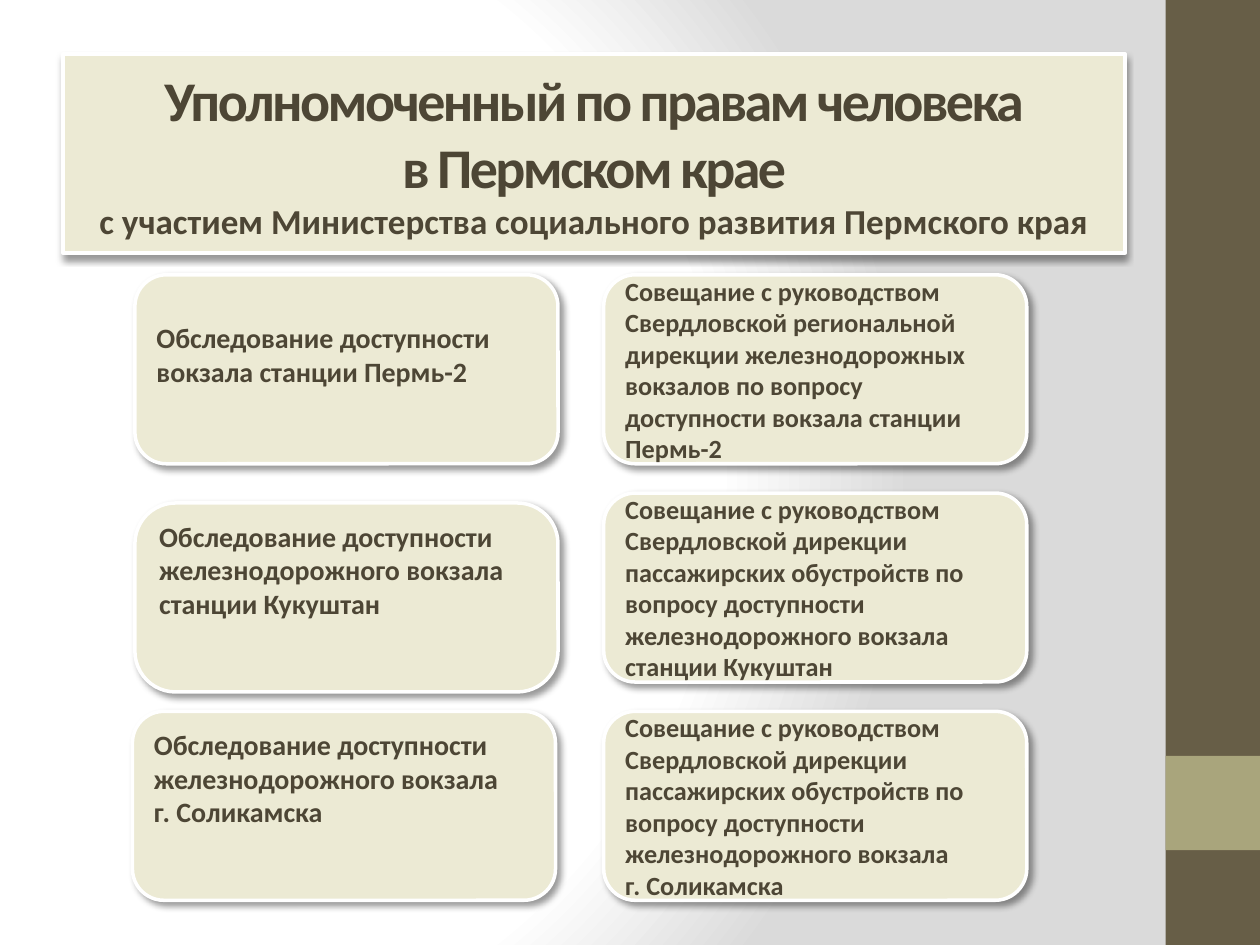
from dataclasses import dataclass

import lxml.etree
import pptx
import pptx.dml.color
import pptx.enum.shapes
import pptx.enum.text
import pptx.oxml
import pptx.oxml.ns
import pptx.util

Cm, Pt = pptx.util.Cm, pptx.util.Pt
SHAPE = pptx.enum.shapes.MSO_SHAPE
ALIGN = pptx.enum.text.PP_ALIGN
ANCHOR = pptx.enum.text.MSO_ANCHOR
NS = pptx.oxml.ns.nsdecls("a", "p")

SLIDE_W, SLIDE_H = 25.4, 19.05
BAR_X, BAR_W = 23.5, 1.9
CARD_W, CARD_H = 8.53, 3.81
LEFT_X, RIGHT_X = 2.72, 12.17
ROW_TOP, ROW_STEP = 5.54, 4.4
INK, CREAM, WHITE = "4D4635", "ECEAD4", "FFFFFF"


@dataclass
class Line:
    text: str
    size: float
    spacing: float = 0


@dataclass
class Card:
    x: float
    y: float
    size: float
    lines: list[str]
    bottom_inset: float = 3.6
    corner: float | None = None


def row_y(row: int) -> float:
    return ROW_TOP + row * ROW_STEP


CARDS = [
    Card(LEFT_X, row_y(0), 16,
         ["Обследование доступности вокзала станции Пермь-2"], 20.6),
    Card(LEFT_X, row_y(1) + 0.2, 16,
         ["Обследование доступности железнодорожного вокзала станции Кукуштан"],
         35.3, 0.215),
    Card(LEFT_X - 0.05, row_y(2), 16,
         ["Обследование доступности железнодорожного вокзала", "г. Соликамска"], 35.3),
    Card(RIGHT_X, row_y(0), 15,
         ["Совещание с руководством Свердловской региональной дирекции "
          "железнодорожных вокзалов по вопросу доступности вокзала станции Пермь-2"]),
    Card(RIGHT_X, row_y(1), 15,
         ["Совещание с руководством Свердловской дирекции пассажирских обустройств "
          "по вопросу доступности железнодорожного вокзала станции Кукуштан"]),
    Card(RIGHT_X, row_y(2), 15,
         ["Совещание с руководством Свердловской дирекции пассажирских обустройств "
          "по вопросу доступности железнодорожного вокзала", "г. Соликамска"]),
]

TITLE = [
    Line("Уполномоченный по правам человека", 32, -1.5),
    Line("в Пермском крае", 32, -1.5),
    Line("с участием Министерства социального развития Пермского края", 20),
]


def rgb(color: str) -> pptx.dml.color.RGBColor:
    return pptx.dml.color.RGBColor.from_string(color)


def set_attrs(obj, values: dict) -> None:
    for name, value in values.items():
        setattr(obj, name, value)


def set_background(s) -> None:
    """Give the slide a circular white-to-grey gradient."""
    stops = "".join(f'<a:gs pos="{pos * 1000}"><a:srgbClr val="{color}"/></a:gs>'
                    for pos, color in ((0, WHITE), (75, WHITE), (100, "DADADA")))
    bg = pptx.oxml.parse_xml(
        f'<p:bg {NS}><p:bgPr><a:gradFill rotWithShape="1"><a:gsLst>{stops}</a:gsLst>'
        '<a:path path="circle"><a:fillToRect l="20000" t="50000" r="100000" b="50000"/>'
        '</a:path></a:gradFill><a:effectLst/></p:bgPr></p:bg>')
    s.element.cSld.insert(0, bg)


def add_bar(s, y: float, height: float, color: str) -> None:
    sp = s.shapes.add_shape(SHAPE.RECTANGLE, Cm(BAR_X), Cm(y), Cm(BAR_W), Cm(height))
    sp.shadow.inherit = False
    sp.fill.solid()
    sp.fill.fore_color.rgb = rgb(color)
    sp.line.fill.background()


def style_panel(sp, shadow_angle: int) -> None:
    """Apply the cream fill, white outline and soft shadow."""
    sp.fill.solid()
    sp.fill.fore_color.rgb = rgb(CREAM)
    sp.line.color.rgb = rgb(WHITE)
    sp.line.width = Pt(2)
    sp.shadow.inherit = False
    effects = sp.element.spPr.find(pptx.oxml.ns.qn("a:effectLst"))
    effects.append(pptx.oxml.parse_xml(
        f'<a:outerShdw {NS} blurRad="{Pt(4)}" dist="{Pt(3)}" dir="{shadow_angle * 60000}" '
        'algn="ctr" rotWithShape="0"><a:srgbClr val="000000"><a:alpha val="40000"/>'
        '</a:srgbClr></a:outerShdw>'))


def write_lines(sp, lines: list[Line], align, bottom_inset: float = 3.6) -> None:
    tf = sp.text_frame
    set_attrs(tf, {"word_wrap": True, "auto_size": pptx.enum.text.MSO_AUTO_SIZE.NONE,
                   "vertical_anchor": ANCHOR.MIDDLE, "margin_bottom": Pt(bottom_inset)})
    for i, line in enumerate(lines):
        p = tf.add_paragraph() if i else tf.paragraphs[0]
        p.alignment = align
        r = p.add_run()
        r.text = line.text
        set_attrs(r.font, {"name": "Calibri", "size": Pt(line.size), "bold": True})
        r.font.color.rgb = rgb(INK)
        if line.spacing:
            r._r.get_or_add_rPr().set("spc", str(int(line.spacing * 100)))


def format_title(sp) -> None:
    set_attrs(sp, {"left": Cm(1.27), "top": Cm(1.09), "width": Cm(21.41), "height": Cm(4.01)})
    sp.element.spPr.append(pptx.oxml.parse_xml(
        f'<a:prstGeom {NS} prst="roundRect"><a:avLst/></a:prstGeom>'))
    style_panel(sp, 90)
    write_lines(sp, TITLE, ALIGN.CENTER)


def add_card(s, card: Card) -> None:
    sp = s.shapes.add_shape(SHAPE.ROUNDED_RECTANGLE, Cm(card.x), Cm(card.y),
                            Cm(CARD_W), Cm(CARD_H))
    if card.corner is not None:
        sp.adjustments[0] = card.corner
    style_panel(sp, 45)
    write_lines(sp, [Line(text, card.size) for text in card.lines],
                ALIGN.LEFT, card.bottom_inset)


def main() -> None:
    prs = pptx.Presentation()
    set_attrs(prs, {"slide_width": Cm(SLIDE_W), "slide_height": Cm(SLIDE_H)})
    s = prs.slides.add_slide(prs.slide_layouts[5])
    set_background(s)
    format_title(s.shapes.title)
    add_bar(s, 0, SLIDE_H, "675E47")
    add_bar(s, 15.24, BAR_W, "A9A57C")
    for card in CARDS:
        add_card(s, card)
    prs.save("out.pptx")


if __name__ == "__main__":
    main()
